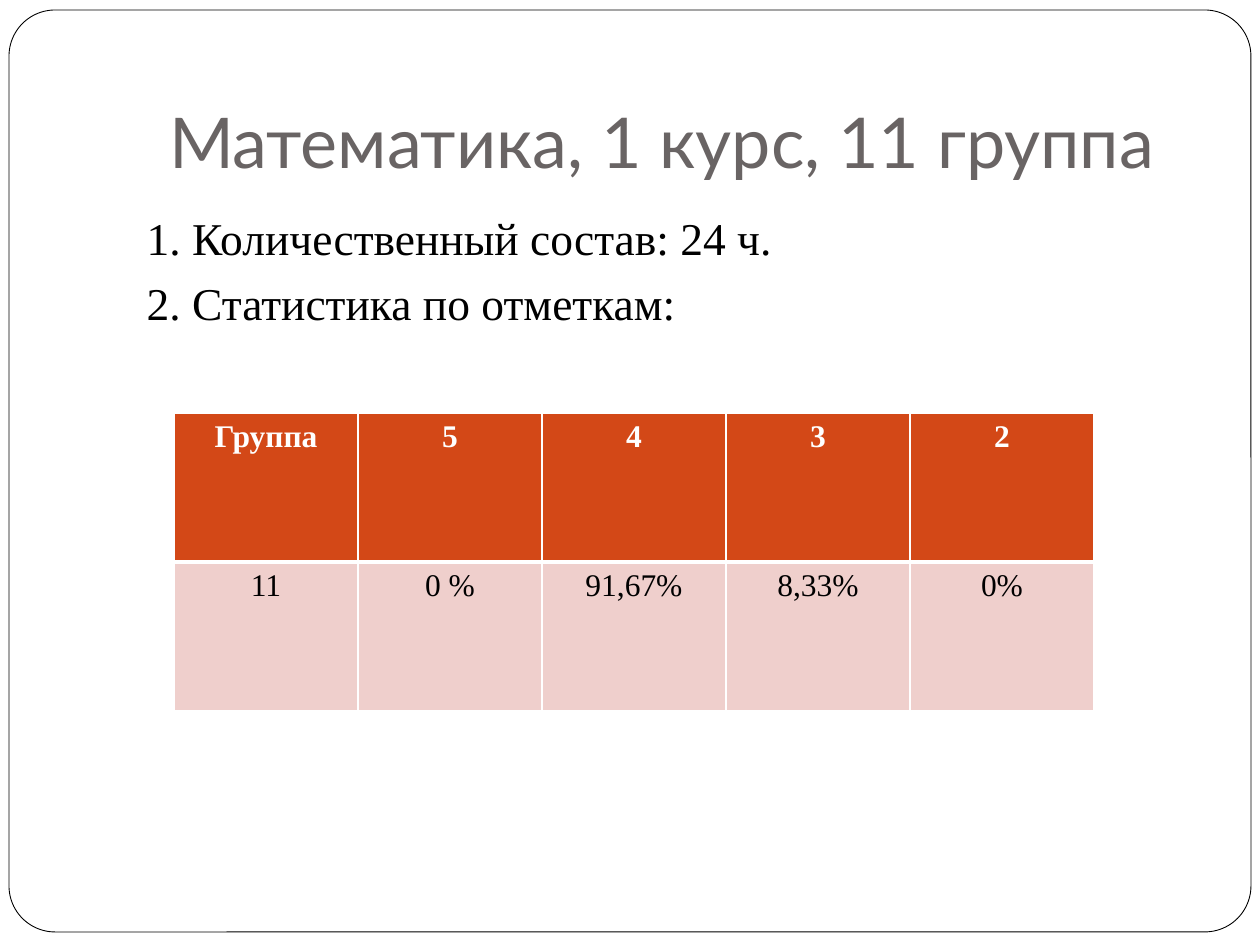
from lxml import etree
from pptx import Presentation
from pptx.dml.color import RGBColor
from pptx.enum.shapes import MSO_SHAPE
from pptx.enum.text import MSO_ANCHOR, MSO_AUTO_SIZE, PP_ALIGN
from pptx.oxml.ns import qn
from pptx.util import Emu, Pt

ROUNDED = MSO_SHAPE.ROUNDED_RECTANGLE
CENTER, LEFT = PP_ALIGN.CENTER, PP_ALIGN.LEFT
TOP, BOTTOM = MSO_ANCHOR.TOP, MSO_ANCHOR.BOTTOM
NO_FIT = MSO_AUTO_SIZE.NONE

TITLE = "Математика, 1 курс, 11 группа"
POINTS = ["1. Количественный состав: 24 ч.", "2. Статистика по отметкам:"]
GRADES = [
    ["Группа", "5", "4", "3", "2"],
    ["11", "0 %", "91,67%", "8,33%", "0%"],
]

# Places in px: left, top, width, height
SLIDE_SIZE = (1260, 945)
FRAME_BOX = (9, 10, 1242, 922)
TITLE_BOX = (126, 38, 1071, 158)
BODY_BOX = (134, 204, 1071, 630)
TABLE_LEFT, TABLE_TOP = 174, 413
COLUMN_WIDTH, ROW_HEIGHT = 184, 149
HANGING_INDENT = 71
TITLE_BOTTOM_INSET = 13


class Theme:
    title_font, text_font = "Lato", "Times New Roman"
    title_size, body_size, table_size = 40, 26, 18
    body_gap = 5.8
    title, text, paper, line = "696464", "000000", "FFFFFF", "000000"
    header_fill, row_fill = "D34817", "EFCFCC"
    frame_line, cell_line, header_line = 0.5, 1, 3


def px(length):
    return Emu(round(length * 914400 / 126))


def place(shape, box):
    shape.left, shape.top, shape.width, shape.height = map(px, box)


def format_text(para, font, size, color, align, bold=False):
    para.alignment = align
    for span in para.runs:
        span.font.name = font
        span.font.size = Pt(size)
        span.font.bold = bold
        span.font.color.rgb = RGBColor.from_string(color)


def set_border(cell, side, width):
    """Draw one cell edge; side is L, R, T or B, in that order."""
    properties = cell._tc.get_or_add_tcPr()
    edge = etree.SubElement(properties, qn(f"a:ln{side}"), w=str(Pt(width)))
    fill = etree.SubElement(edge, qn("a:solidFill"))
    etree.SubElement(fill, qn("a:srgbClr"), val=Theme.paper)


def add_frame(page):
    frame = page.shapes.add_shape(ROUNDED, *map(px, FRAME_BOX))
    frame.adjustments[0] = 0.05
    frame.shadow.inherit = False
    frame.fill.solid()
    frame.fill.fore_color.rgb = RGBColor.from_string(Theme.paper)
    frame.line.color.rgb = RGBColor.from_string(Theme.line)
    frame.line.width = Pt(Theme.frame_line)
    page.shapes.element.insert(2, frame.element)  # behind the placeholders


def fill_title(title):
    place(title, TITLE_BOX)
    frame = title.text_frame
    frame.text = TITLE
    frame.auto_size = NO_FIT
    frame.vertical_anchor = BOTTOM
    frame.margin_bottom = px(TITLE_BOTTOM_INSET)
    format_text(frame.paragraphs[0], Theme.title_font, Theme.title_size,
                Theme.title, CENTER)


def fill_body(body):
    place(body, BODY_BOX)
    frame = body.text_frame
    frame.text = "\n".join(POINTS)
    frame.auto_size = NO_FIT
    frame.vertical_anchor = TOP
    for para in frame.paragraphs:
        format_text(para, Theme.text_font, Theme.body_size, Theme.text, LEFT)
        para.space_before = Pt(Theme.body_gap)
        properties = para._p.get_or_add_pPr()
        properties.set("marL", str(px(HANGING_INDENT)))
        properties.set("indent", str(-px(HANGING_INDENT)))
        etree.SubElement(properties, qn("a:buNone"))


def add_grades(page):
    rows, columns = len(GRADES), len(GRADES[0])
    table = page.shapes.add_table(
        rows, columns, px(TABLE_LEFT), px(TABLE_TOP),
        px(columns * COLUMN_WIDTH), px(rows * ROW_HEIGHT)).table
    for column in table.columns:
        column.width = px(COLUMN_WIDTH)
    for index, values in enumerate(GRADES):
        header = index == 0
        table.rows[index].height = px(ROW_HEIGHT)
        shared_side = "B" if header else "T"
        fill = Theme.header_fill if header else Theme.row_fill
        color = Theme.paper if header else Theme.text
        for cell, value in zip(table.rows[index].cells, values):
            cell.text = value
            format_text(cell.text_frame.paragraphs[0], Theme.text_font,
                        Theme.table_size, color, CENTER, header)
            for side in "LRTB":
                set_border(cell, side, Theme.header_line
                           if side == shared_side else Theme.cell_line)
            cell.fill.solid()
            cell.fill.fore_color.rgb = RGBColor.from_string(fill)


def main():
    deck = Presentation()
    deck.slide_width, deck.slide_height = map(px, SLIDE_SIZE)
    page = deck.slides.add_slide(deck.slide_layouts[1])
    add_frame(page)
    fill_title(page.shapes.title)
    fill_body(page.placeholders[1])
    add_grades(page)
    deck.save("out.pptx")


if __name__ == "__main__":
    main()
